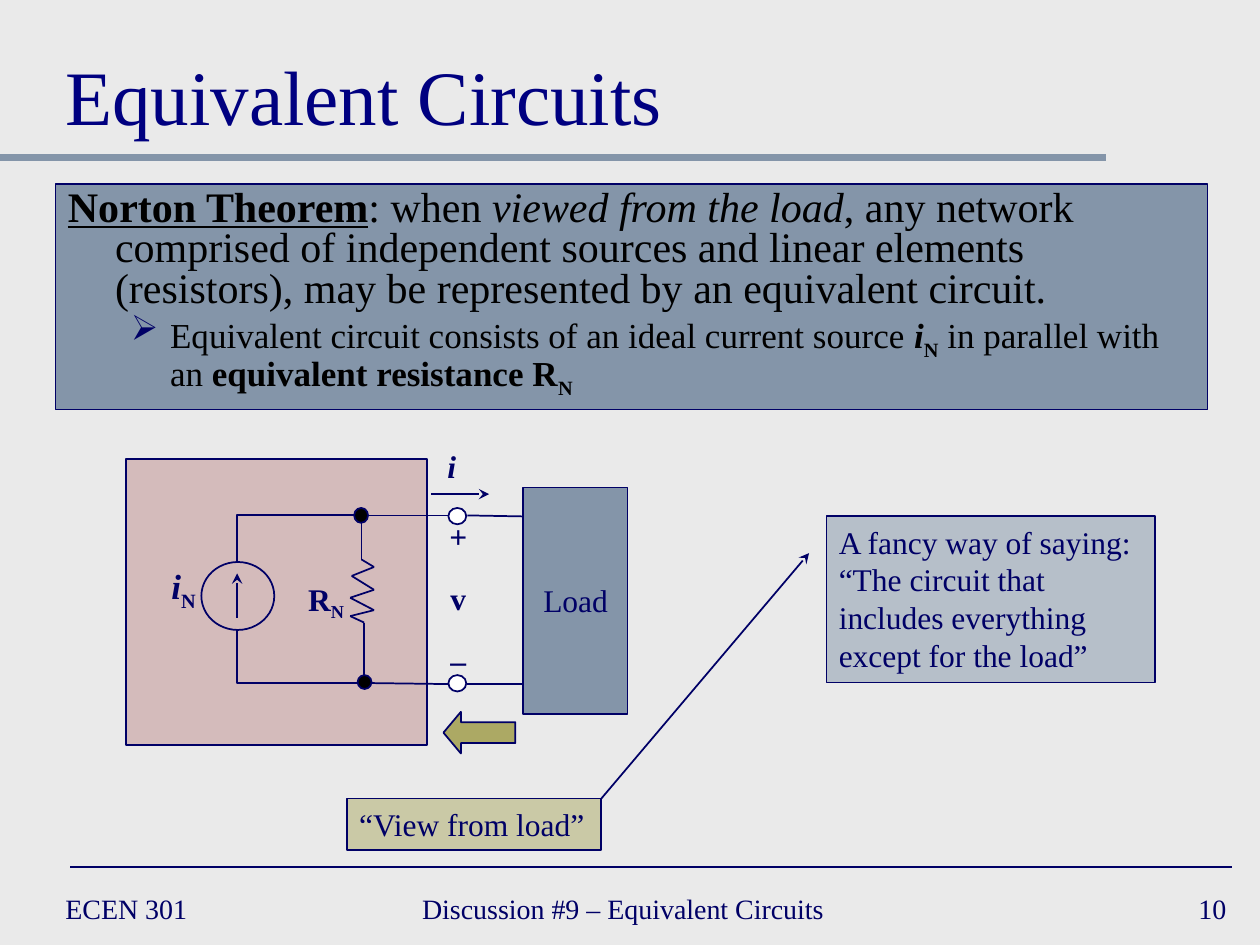
from itertools import pairwise

from lxml.etree import SubElement
from pptx import Presentation
from pptx.dml.color import RGBColor
from pptx.enum.shapes import MSO_CONNECTOR as Link, MSO_SHAPE as Preset
from pptx.enum.text import MSO_ANCHOR as Anchor, PP_ALIGN as Align
from pptx.oxml.ns import qn
from pptx.util import Cm, Pt

FONT = "Times New Roman"
PAPER = RGBColor(0xEA, 0xEA, 0xEA)
NAVY = RGBColor(0x00, 0x00, 0x66)
TITLE_BLUE = RGBColor(0x00, 0x00, 0x80)
SLATE = RGBColor(0x84, 0x95, 0xA9)
MAROON = RGBColor(0x80, 0x00, 0x00)
OLIVE = RGBColor(0xAC, 0xA9, 0x64)
BLACK = RGBColor(0x00, 0x00, 0x00)
WHITE = RGBColor(0xFF, 0xFF, 0xFF)

# Content: a paragraph is a list of (text, style) runs
# styles: b bold, i italic, u underlined, s subscript
THEOREM = [
    ("Norton Theorem", "bu"), (": when ", ""), ("viewed from the load", "i"),
    (", any network comprised of independent sources and linear elements "
     "(resistors), may be represented by an equivalent circuit.", ""),
]
CONSEQUENCE = [
    ("Equivalent circuit consists of an ideal current source ", ""),
    ("i", "bi"), ("N", "bs"), (" in parallel with an ", ""),
    ("equivalent resistance R", "b"), ("N", "bs"),
]
REMARK = [
    [("A fancy way of saying:", "")],
    [("“The circuit that includes everything except for the load”", "")],
]
FOOTERS = [  # text, box in cm, alignment
    ("ECEN 301", (1.07, 17.78, 5.51, 1.07), Align.LEFT),
    ("Discussion #9 – Equivalent Circuits", (8.26, 17.78, 9.73, 1.07), Align.LEFT),
    ("10", (19.69, 17.78, 5.28, 1.07), Align.RIGHT),
]
LABELS = [  # runs, box in cm, size
    ([("i", "bi"), ("N", "bs")], (3.18, 11.25, 1.04, 1.09), 20),
    ([("R", "b"), ("N", "bs")], (5.94, 11.56, 1.27, 1.02), 18),
    ([("Load", "")], (10.69, 11.58, 1.83, 1.02), 18),
    ([("i", "bi")], (8.76, 8.89, 0.69, 1.02), 18),
]

# Circuit geometry in cm
RESISTOR = [(7.29, 10.54), (7.29, 11.28), (7.54, 11.43), (7.09, 11.61),
            (7.54, 11.89), (7.06, 12.05), (7.54, 12.3), (7.06, 12.42),
            (7.34, 12.55), (7.34, 13.61)]
WIRES = [((7.44, 10.39), (9.04, 10.39)), ((9.42, 10.39), (10.54, 10.41)),
         ((7.49, 13.77), (9.04, 13.79)), ((9.42, 13.79), (10.54, 13.79))]
CORNERS = [((7.14, 10.39), (4.78, 11.33)), ((7.21, 13.77), (4.78, 12.7))]
CIRCLES = [  # box, fill
    ((4.06, 11.33, 1.47, 1.37), None),
    ((9.04, 10.24, 0.36, 0.33), WHITE), ((9.04, 13.61, 0.36, 0.33), WHITE),
    ((7.14, 10.24, 0.28, 0.3), BLACK), ((7.21, 13.61, 0.28, 0.28), BLACK),
]
ARROWS = [((12.12, 16.1), (16.31, 11.15)),  # view to remark
          ((4.78, 12.45), (4.78, 11.56)),   # source direction
          ((8.69, 9.96), (9.86, 9.96))]     # load current

presentation = Presentation()
presentation.slide_width, presentation.slide_height = Cm(25.4), Cm(19.05)
slide = presentation.slides.add_slide(presentation.slide_layouts[6])
slide.background.fill.solid()
slide.background.fill.fore_color.rgb = PAPER


def add_line(begin, end, color=NAVY, width=1, kind=Link.STRAIGHT, arrow=False):
    connector = slide.shapes.add_connector(
        kind, *(Cm(value) for value in (*begin, *end)))
    connector.line.color.rgb = color
    connector.line.width = Pt(width)
    if arrow:
        SubElement(connector.line._get_or_add_ln(), qn("a:tailEnd"), type="stealth")
    SubElement(connector._element.spPr, qn("a:effectLst"))
    return connector


def add_corner(begin, end):
    connector = add_line(begin, end, kind=Link.ELBOW)
    connector._element.spPr.find(qn("a:prstGeom")).set("prst", "bentConnector2")


def add_block(preset, box, fill=None, opacity=100, width=1):
    shape = slide.shapes.add_shape(preset, *map(Cm, box))
    shape.shadow.inherit = False
    shape.line.color.rgb = NAVY
    shape.line.width = Pt(width)
    if fill is None:
        shape.fill.background()
        return shape
    shape.fill.solid()
    shape.fill.fore_color.rgb = fill
    if opacity < 100:
        color = shape._element.spPr.find(qn("a:solidFill"))[0]
        SubElement(color, qn("a:alpha"), val=str(opacity * 1000))
    return shape


def add_bullet(paragraph, symbol, color):
    properties = paragraph._p.get_or_add_pPr()
    bullet_color = SubElement(properties, qn("a:buClr"))
    SubElement(bullet_color, qn("a:srgbClr"), val=str(color))
    SubElement(properties, qn("a:buChar"), char=symbol)


def set_indent(paragraph, left, first):
    properties = paragraph._p.get_or_add_pPr()
    properties.set("marL", str(Cm(left)))
    properties.set("indent", str(Cm(first)))


def write(paragraph, runs, size, color=NAVY, align=Align.LEFT):
    paragraph.alignment = align
    font = paragraph.font
    font.name, font.size, font.color.rgb = FONT, Pt(size), color
    for text, style in runs:
        run = paragraph.add_run()
        run.text = text
        if "b" in style:
            run.font.bold = True
        if "i" in style:
            run.font.italic = True
        if "u" in style:
            run.font.underline = True
        if "s" in style:
            run.font._element.set("baseline", "-25000")


def fill_frame(shape, paragraphs, size, color=NAVY, align=Align.LEFT,
               anchor=Anchor.TOP, wrap=True, gap=0):
    frame = shape.text_frame
    frame.word_wrap, frame.vertical_anchor = wrap, anchor
    for index, runs in enumerate(paragraphs):
        paragraph = frame.add_paragraph() if index else frame.paragraphs[0]
        if index and gap:
            paragraph.space_before = Pt(gap)
        write(paragraph, runs, size, color, align)


def add_text(box, paragraphs, size, **options):
    fill_frame(slide.shapes.add_textbox(*map(Cm, box)), paragraphs, size, **options)


# Rules, title and footer
add_line((0, 3.18), (22.3, 3.18), SLATE, 4)
add_line((1.42, 17.48), (24.84, 17.48))
add_text((1.07, 0.43, 23.29, 2.54), [[("Equivalent Circuits", "")]], 44,
         color=TITLE_BLUE, anchor=Anchor.BOTTOM)
for text, box, align in FOOTERS:
    add_text(box, [[(text, "")]], 16, align=align, anchor=Anchor.MIDDLE)

# Theorem panel
panel = add_block(Preset.RECTANGLE, (1.12, 3.71, 23.22, 4.55), SLATE, width=0.75)
panel.text_frame.word_wrap = True
panel.text_frame.vertical_anchor = Anchor.TOP
theorem = panel.text_frame.paragraphs[0]
consequence = panel.text_frame.add_paragraph()
theorem.line_spacing = consequence.line_spacing = 0.8
consequence.space_before = Pt(4)
set_indent(theorem, 0.95, -0.95)
set_indent(consequence, 2.06, -0.79)
add_bullet(consequence, "➢", NAVY)
write(theorem, THEOREM, 24, BLACK)
write(consequence, CONSEQUENCE, 20, BLACK)

# Network, view arrow and remarks
add_block(Preset.RECTANGLE, (2.54, 9.25, 6.07, 5.77), MAROON, 20)
view_arrow = add_block(Preset.LEFT_ARROW, (8.94, 14.35, 1.45, 0.84), OLIVE)
view_arrow.adjustments[1] = 0.42
view = add_block(Preset.RECTANGLE, (6.99, 16.1, 5.13, 1.04), OLIVE, 50)
fill_frame(view, [[("“View from load”", "")]], 18, wrap=False)
remark = add_block(Preset.RECTANGLE, (16.66, 10.41, 6.63, 3.35), SLATE, 50)
fill_frame(remark, REMARK, 18)

# Circuit
add_block(Preset.RECTANGLE, (10.54, 9.83, 2.11, 4.57), SLATE)
for box, fill in CIRCLES:
    add_block(Preset.OVAL, box, fill)
for begin, end in [*pairwise(RESISTOR), *WIRES]:
    add_line(begin, end)
for begin, end in CORNERS:
    add_corner(begin, end)
for begin, end in ARROWS:
    add_line(begin, end, arrow=True)

# Circuit labels
for runs, box, size in LABELS:
    add_text(box, [runs], size, align=Align.CENTER, wrap=False)
add_text((8.81, 10.29, 0.86, 3.56), [[(sign, "b")] for sign in "+v–"], 18,
         align=Align.CENTER, wrap=False, gap=14)

presentation.save("out.pptx")
